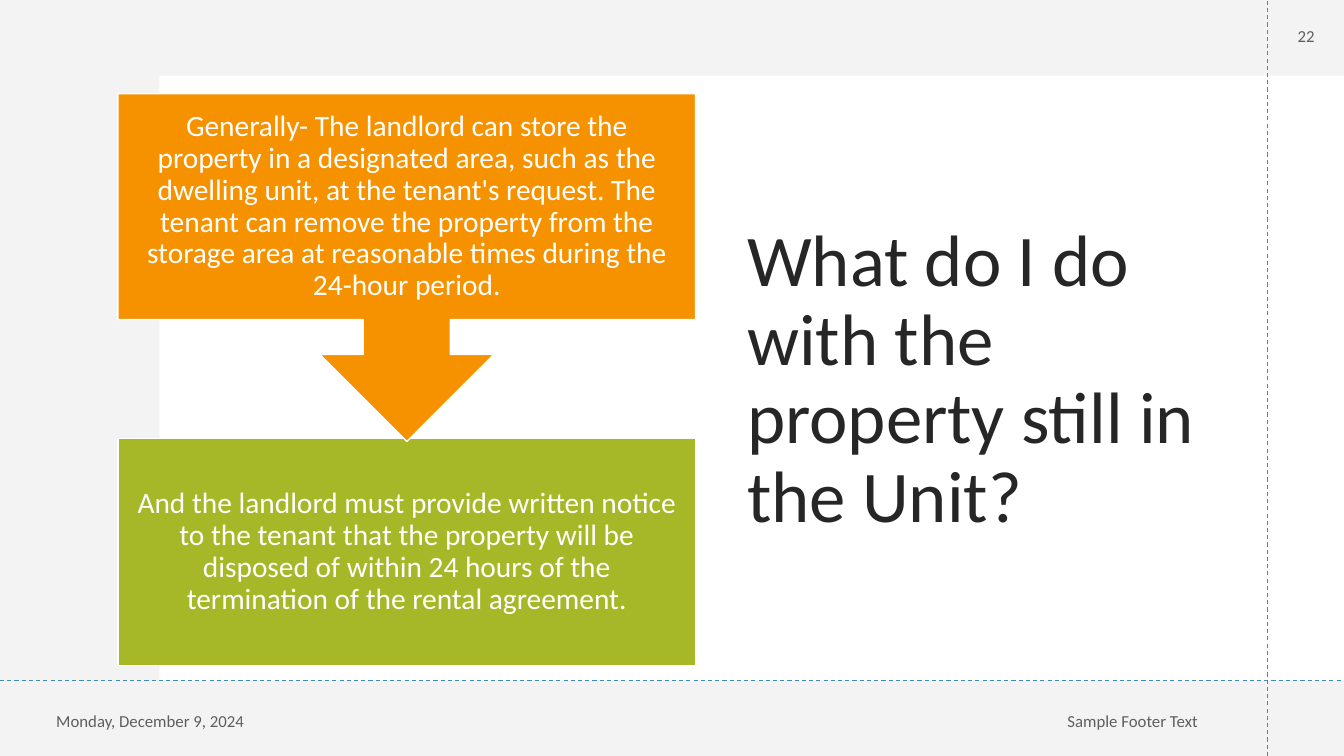
from dataclasses import dataclass

from pptx import Presentation
from pptx.dml.color import RGBColor
from pptx.enum.dml import MSO_LINE_DASH_STYLE as Dash
from pptx.enum.shapes import MSO_CONNECTOR as Connector, MSO_SHAPE as Preset
from pptx.enum.text import MSO_ANCHOR as Anchor, MSO_AUTO_SIZE as AutoSize, PP_ALIGN as Align
from pptx.oxml.ns import qn
from pptx.shapes.autoshape import Shape
from pptx.slide import Slide
from pptx.text.text import TextFrame
from pptx.util import Inches, Pt
from lxml import etree


@dataclass(frozen=True)
class Theme:
    font: str = "Calibri"
    white: str = "FFFFFF"
    wash: str = "DDDDDD"
    title: str = "262626"
    muted: str = "5E5E5E"
    rule: str = "418AB3"
    orange: str = "F69200"
    green: str = "A6B727"
    title_size: float = 52
    step_size: float = 21
    footer_size: float = 12


@dataclass(frozen=True)
class Area:
    left: float
    top: float
    width: float
    height: float

    def lengths(self) -> tuple:
        return tuple(Inches(v) for v in (self.left, self.top, self.width, self.height))


@dataclass(frozen=True)
class Panel:
    area: Area
    color: str
    opacity: int = 100


@dataclass(frozen=True)
class Step:
    preset: Preset
    area: Area
    color: str
    text: str


@dataclass(frozen=True)
class Label:
    area: Area
    text: str
    align: Align


@dataclass(frozen=True)
class Rule:
    start: tuple[float, float]
    end: tuple[float, float]


THEME = Theme()
WIDTH, HEIGHT = 13.33, 7.5
FOOTER_TOP, MARGIN_LEFT = 6.75, 12.57
FULL = Area(0, 0, WIDTH, HEIGHT)
TITLE_AREA = Area(7.31, 1.13, 5.08, 5.3)
TITLE = "What do I do with the property still in the Unit?"

PANELS = [
    Panel(FULL, THEME.white),
    Panel(FULL, THEME.wash, 35),
    Panel(Area(1.58, 0.75, 11.75, 6), THEME.white),
]
LABELS = [
    Label(Area(12.58, -0.02, 0.75, 0.75), "22", Align.CENTER),
    Label(Area(0.46, 6.8, 3, 0.7), "Monday, December 9, 2024", Align.LEFT),
    Label(Area(7.48, 6.8, 4.5, 0.7), "Sample Footer Text", Align.RIGHT),
]
RULES = [
    Rule((MARGIN_LEFT, HEIGHT), (MARGIN_LEFT, 0)),
    Rule((0, FOOTER_TOP), (WIDTH, FOOTER_TOP)),
]
# The callout lies over the rectangle, so its arrow tip stays visible
STEPS = [
    Step(Preset.RECTANGLE, Area(1.17, 4.35, 5.73, 2.25), THEME.green,
         "And the landlord must provide written notice to the tenant that the "
         "property will be disposed of within 24 hours of the termination of "
         "the rental agreement."),
    Step(Preset.DOWN_ARROW_CALLOUT, Area(1.17, 0.93, 5.73, 3.45), THEME.orange,
         "Generally- The landlord can store the property in a designated area, "
         "such as the dwelling unit, at the tenant's request. The tenant can "
         "remove the property from the storage area at reasonable times during "
         "the 24-hour period."),
]


def rgb(color: str) -> RGBColor:
    return RGBColor.from_string(color)


def write(frame: TextFrame, text: str, size: float, color: str,
          align: Align, inset: float | None = None, **spacing: object) -> None:
    frame_format = {"word_wrap": True, "auto_size": AutoSize.NONE,
                    "vertical_anchor": Anchor.MIDDLE}
    if inset is not None:
        for side in ("left", "top", "right", "bottom"):
            frame_format[f"margin_{side}"] = Inches(inset)
    for name, value in frame_format.items():
        setattr(frame, name, value)
    para = frame.paragraphs[0]
    for name, value in {"alignment": align, **spacing}.items():
        setattr(para, name, value)
    span = para.add_run()
    span.text = text
    for name, value in {"name": THEME.font, "size": Pt(size)}.items():
        setattr(span.font, name, value)
    span.font.color.rgb = rgb(color)


def add_filled(page: Slide, preset: Preset, area: Area, color: str) -> Shape:
    box = page.shapes.add_shape(preset, *area.lengths())
    box.shadow.inherit = False
    box.fill.solid()
    box.fill.fore_color.rgb = rgb(color)
    return box


def add_panel(page: Slide, panel: Panel) -> None:
    box = add_filled(page, Preset.RECTANGLE, panel.area, panel.color)
    box.line.fill.background()
    if panel.opacity < 100:
        tint = box.fill._xPr.find(qn("a:solidFill"))[0]
        etree.SubElement(tint, qn("a:alpha"), val=str(panel.opacity * 1000))


def add_title(page: Slide) -> None:
    title = page.shapes.title
    title.left, title.top, title.width, title.height = TITLE_AREA.lengths()
    write(title.text_frame, TITLE, THEME.title_size, THEME.title, Align.LEFT,
          line_spacing=0.9)
    page.shapes._spTree.append(title._element)  # bring in front of the panels


def add_label(page: Slide, label: Label) -> None:
    box = page.shapes.add_textbox(*label.area.lengths())
    write(box.text_frame, label.text, THEME.footer_size, THEME.muted, label.align,
          space_after=Pt(6))


def add_rule(page: Slide, rule: Rule) -> None:
    ends = [Inches(v) for v in (*rule.start, *rule.end)]
    line = page.shapes.add_connector(Connector.STRAIGHT, *ends)
    line.line.color.rgb = rgb(THEME.rule)
    for name, value in {"width": Pt(0.75), "dash_style": Dash.DASH}.items():
        setattr(line.line, name, value)
    etree.SubElement(line._element.spPr, qn("a:effectLst"))


def add_step(page: Slide, step: Step) -> None:
    box = add_filled(page, step.preset, step.area, step.color)
    box.line.color.rgb = rgb(THEME.white)
    box.line.width = Pt(1)
    write(box.text_frame, step.text, THEME.step_size, THEME.white, Align.CENTER,
          inset=0.16, line_spacing=0.9)


def main() -> None:
    deck = Presentation()
    deck.slide_width, deck.slide_height = Inches(WIDTH), Inches(HEIGHT)
    page = deck.slides.add_slide(deck.slide_layouts[5])

    # Background and title
    for panel in PANELS:
        add_panel(page, panel)
    add_title(page)

    # Page number, date, footer and dashed guides
    for label in LABELS:
        add_label(page, label)
    for rule in RULES:
        add_rule(page, rule)

    # Two-step process
    for step in STEPS:
        add_step(page, step)

    deck.save("out.pptx")


if __name__ == "__main__":
    main()
